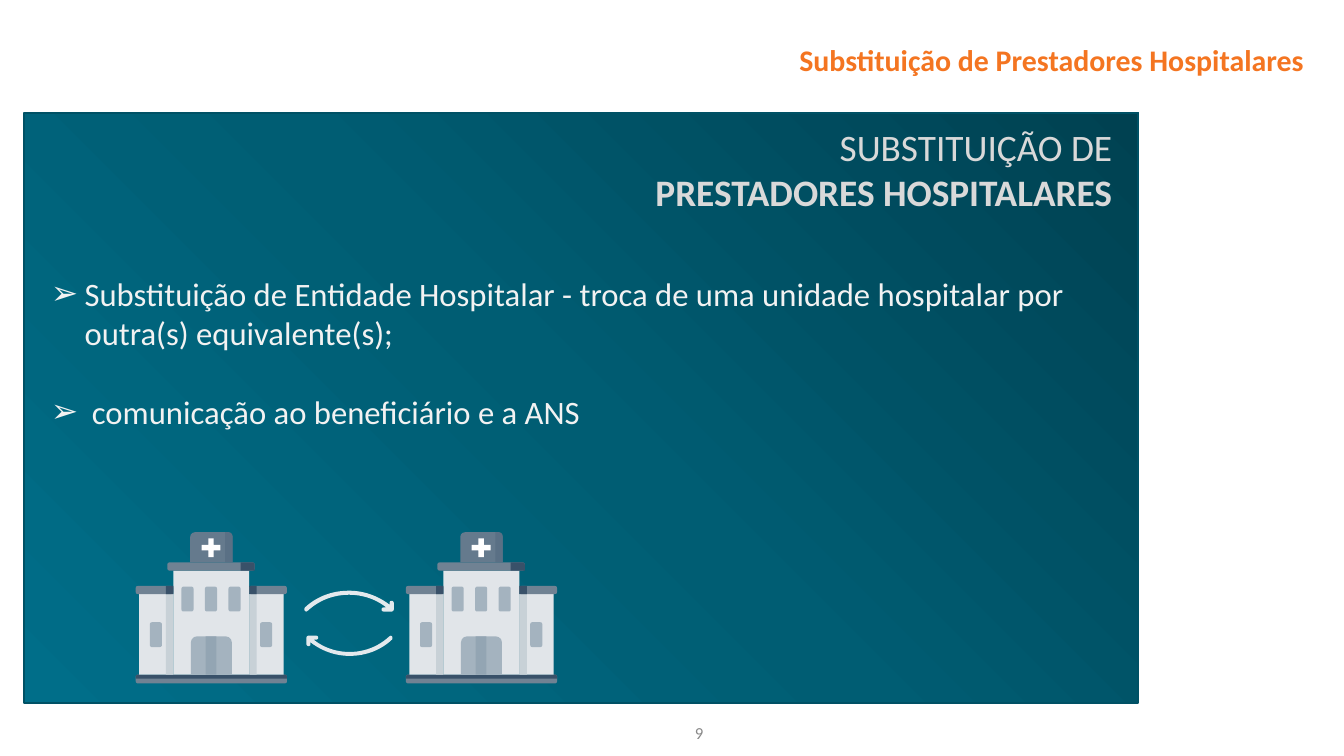
from lxml import etree
from pptx import Presentation
from pptx.dml.color import RGBColor
from pptx.enum.shapes import MSO_SHAPE
from pptx.enum.text import MSO_ANCHOR, PP_ALIGN
from pptx.oxml.ns import qn
from pptx.util import Inches, Pt

RECTANGLE = MSO_SHAPE.RECTANGLE
ROUNDED = MSO_SHAPE.ROUNDED_RECTANGLE
TOP_ROUNDED = MSO_SHAPE.ROUND_2_SAME_RECTANGLE
CORNER_ROUNDED = MSO_SHAPE.ROUND_1_RECTANGLE
CROSS = MSO_SHAPE.CROSS
RIGHT = PP_ALIGN.RIGHT
LEFT = PP_ALIGN.LEFT
MIDDLE = MSO_ANCHOR.MIDDLE
TOP = MSO_ANCHOR.TOP

FONT = "Calibri"
ORANGE = RGBColor(0xF4, 0x75, 0x21)
PAGE_GRAY = RGBColor(0x89, 0x89, 0x89)
HEADING_GRAY = RGBColor(0xD9, 0xD9, 0xD9)
BODY_WHITE = RGBColor(0xF2, 0xF2, 0xF2)
WHITE = RGBColor(0xFF, 0xFF, 0xFF)
PANEL_LINE = RGBColor(0x00, 0x51, 0x65)
PANEL_STOPS = (
    (0, RGBColor(0x00, 0x41, 0x51)),
    (50, RGBColor(0x00, 0x5D, 0x73)),
    (100, RGBColor(0x00, 0x6E, 0x89)),
)
SLATE = RGBColor(0x70, 0x82, 0x93)
NAVY = RGBColor(0x39, 0x51, 0x69)
WALL = RGBColor(0xE1, 0xE5, 0xE9)
WALL_SHADE = RGBColor(0xC8, 0xD1, 0xD7)
GLASS = RGBColor(0xA4, 0xB3, 0xBF)
DOOR_SHADE = RGBColor(0x93, 0xA5, 0xB3)
TOWER = RGBColor(0x65, 0x7A, 0x8D)
TOWER_SHADE = RGBColor(0x5A, 0x70, 0x85)
ARROW = RGBColor(0xE3, 0xE9, 0xED)

# Shape, left, top, width, height, corner size, colour; from the hospital's top left
HOSPITAL_PARTS = [
    (ROUNDED, 0, 2.12, 2.25, 0.13, 0.03, SLATE),
    (TOP_ROUNDED, 0, 2.12, 2.25, 0.06, 0.03, NAVY),
    (RECTANGLE, 0.56, 0.57, 1.13, 1.55, 0, WALL),
    (ROUNDED, 0.47, 0.45, 1.3, 0.12, 0.03, SLATE),
    (CORNER_ROUNDED, 1.56, 0.45, 0.21, 0.12, 0.03, NAVY),
    (TOP_ROUNDED, 0.82, 1.55, 0.61, 0.57, 0.09, GLASS),
    (RECTANGLE, 1.04, 1.55, 0.16, 0.57, 0, DOOR_SHADE),
    (TOP_ROUNDED, 0.81, 0, 0.63, 0.45, 0.07, TOWER),
    (CORNER_ROUNDED, 1.33, 0, 0.11, 0.45, 0.07, TOWER_SHADE),
    (CROSS, 0.98, 0.09, 0.28, 0.28, 0.1, WHITE),
]
for wing_left, roof_left, shade_left, window_left in (
        (0.05, 0, 0.45, 0.21), (1.69, 1.69, 1.69, 1.85)):
    HOSPITAL_PARTS += [
        (RECTANGLE, wing_left, 0.92, 0.51, 1.2, 0, WALL),
        (RECTANGLE, shade_left, 0.92, 0.11, 1.2, 0, WALL_SHADE),
        (ROUNDED, window_left, 1.34, 0.18, 0.37, 0.03, GLASS),
        (ROUNDED, roof_left, 0.8, 0.56, 0.12, 0.03, SLATE),
        (RECTANGLE, shade_left, 0.8, 0.11, 0.12, 0, NAVY),
    ]
HOSPITAL_PARTS += [
    (ROUNDED, 0.68 + 0.35 * column, 0.81, 0.18, 0.37, 0.03, GLASS)
    for column in range(3)
]

# One point is a straight segment; three points are a Bézier segment
ARROW_START = (0.06, 0.3)
ARROW_SEGMENTS = (
    ((0.23, 0.14), (0.45, 0.06), (0.67, 0.06)),
    ((0.86, 0.06), (1.06, 0.12), (1.22, 0.25)),
    ((1.18, 0.25),),
    ((1.14, 0.25), (1.14, 0.31), (1.18, 0.31)),
    ((1.3, 0.31),),
    ((1.31, 0.31), (1.33, 0.3), (1.33, 0.28)),
    ((1.33, 0.18),),
    ((1.33, 0.16), (1.31, 0.15), (1.3, 0.15)),
    ((1.28, 0.15), (1.27, 0.16), (1.27, 0.18)),
    ((1.27, 0.21),),
    ((1.09, 0.07), (0.88, 0), (0.67, 0)),
    ((0.43, 0), (0.2, 0.08), (0.02, 0.25)),
    ((0, 0.28), (0.02, 0.31), (0.04, 0.31)),
)


def paint(shape, color):
    shape.shadow.inherit = False
    shape.fill.solid()
    shape.fill.fore_color.rgb = color
    shape.line.fill.background()


def style(font, size, color, bold=False):
    font.name = FONT
    font.size = Pt(size)
    font.color.rgb = color
    font.bold = bold


def add_text(slide, box, text, size, color, align=LEFT, anchor=TOP, bold=False):
    text_box = slide.shapes.add_textbox(*map(Inches, box))
    text_frame = text_box.text_frame
    text_frame.word_wrap = True
    text_frame.vertical_anchor = anchor
    text_frame.text = text
    for paragraph in text_frame.paragraphs:
        paragraph.alignment = align
        for run in paragraph.runs:
            style(run.font, size, color, bold)
    return text_frame


def add_panel(slide, box):
    """Rectangle whose gradient spreads from its top right corner."""
    panel = slide.shapes.add_shape(RECTANGLE, *map(Inches, box))
    panel.shadow.inherit = False
    panel.line.color.rgb = PANEL_LINE
    panel.line.width = Pt(2)
    panel.fill.gradient()
    gradient = panel._element.spPr.find(qn("a:gradFill"))
    for child in list(gradient):
        gradient.remove(child)
    stops = etree.SubElement(gradient, qn("a:gsLst"))
    for position, color in PANEL_STOPS:
        stop = etree.SubElement(stops, qn("a:gs"), pos=str(position * 1000))
        etree.SubElement(stop, qn("a:srgbClr"), val=str(color))
    circle = etree.SubElement(gradient, qn("a:path"), path="circle")
    etree.SubElement(circle, qn("a:fillToRect"), l="100000", b="100000")


def add_bullets(slide, box, items):
    text_frame = add_text(slide, box, "\n".join(items), 35, BODY_WHITE)
    for index, paragraph in enumerate(text_frame.paragraphs):
        properties = paragraph._p.get_or_add_pPr()
        properties.set("marL", str(Inches(0.5)))
        properties.set("indent", str(Inches(-0.5)))
        etree.SubElement(properties, qn("a:buFont"), typeface=FONT)
        etree.SubElement(properties, qn("a:buChar"), char="➢")
        if index:
            paragraph.space_before = Pt(43)


def add_hospital(slide, left, top):
    group = slide.shapes.add_group_shape()
    for kind, x, y, width, height, corner, color in HOSPITAL_PARTS:
        part = group.shapes.add_shape(
            kind, *map(Inches, (left + x, top + y, width, height)))
        if corner:
            part.adjustments[0] = min(corner / min(width, height), 0.5)
        paint(part, color)


def bezier(start, first, second, end, steps=12):
    for step in range(1, steps + 1):
        t = step / steps
        weights = ((1 - t) ** 3, 3 * t * (1 - t) ** 2, 3 * t * t * (1 - t), t ** 3)
        yield tuple(sum(weight * point[axis] for weight, point
                        in zip(weights, (start, first, second, end)))
                    for axis in (0, 1))


def add_curved_arrow(slide, box, rotation=0):
    points = [ARROW_START]
    for segment in ARROW_SEGMENTS:
        points += bezier(points[-1], *segment) if len(segment) == 3 else segment
    # The builder rounds coordinates to whole numbers, so it is given EMU
    vertices = [(Inches(x), Inches(y)) for x, y in points]
    builder = slide.shapes.build_freeform(*vertices[0])
    builder.add_line_segments(vertices[1:], close=True)
    arrow = builder.convert_to_shape()
    arrow.left, arrow.top, arrow.width, arrow.height = map(Inches, box)
    arrow.rotation = rotation
    paint(arrow, ARROW)


def add_exchange(slide, left, top):
    """Two hospitals with a pair of opposite arrows between them."""
    for offset in (0, 4.02):
        add_hospital(slide, left + offset, top)
    add_curved_arrow(slide, (left + 2.51, top + 0.87, 1.33, 0.31))
    add_curved_arrow(slide, (left + 2.54, top + 1.54, 1.28, 0.3), 180)


def main():
    presentation = Presentation()
    presentation.slide_width = Inches(20)
    presentation.slide_height = Inches(11.25)
    slide = presentation.slides.add_slide(presentation.slide_layouts[6])

    add_text(slide, (10.24, 10.71, 0.78, 0.4), "9", 18, PAGE_GRAY)
    title = add_text(slide, (0, 0.44, 20, 0.9), "Substituição de Prestadores Hospitalares",
                     32, ORANGE, RIGHT, MIDDLE, True)
    title.margin_right = Inches(0.59)
    add_panel(slide, (0.36, 1.68, 16.58, 8.78))
    heading = add_text(slide, (3.79, 1.8, 12.86, 1.98),
                       "SUBSTITUIÇÃO DE\vPRESTADORES HOSPITALARES", 40, HEADING_GRAY, RIGHT)
    heading.paragraphs[0].runs[1].font.bold = True
    add_exchange(slide, 2.02, 7.92)
    add_bullets(slide, (0.66, 4.02, 15.99, 3.05), (
        "Substituição de Entidade Hospitalar - troca de uma unidade hospitalar "
        "por outra(s) equivalente(s);",
        " comunicação ao beneficiário e a ANS",
    ))
    presentation.save("out.pptx")


if __name__ == "__main__":
    main()
